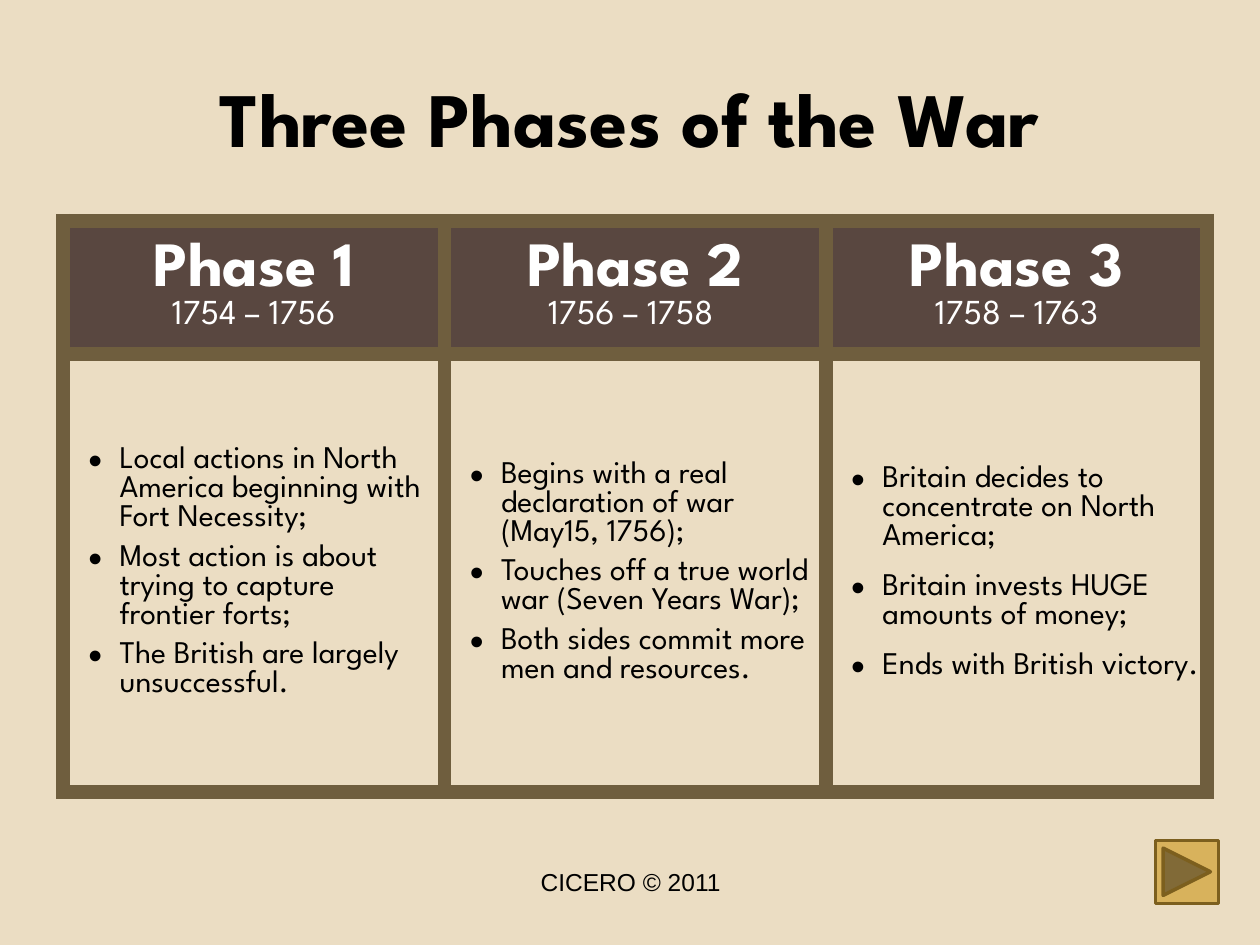
"""Build a slide with a table of the three phases of the war."""
from lxml import etree
from pptx import Presentation
from pptx.dml.color import RGBColor
from pptx.enum.shapes import MSO_SHAPE
from pptx.enum.text import MSO_ANCHOR, PP_ALIGN
from pptx.oxml.ns import qn
from pptx.util import Cm, Pt

CENTER, LEFT = PP_ALIGN.CENTER, PP_ALIGN.LEFT
MIDDLE, TOP = MSO_ANCHOR.MIDDLE, MSO_ANCHOR.TOP
NEXT = MSO_SHAPE.ACTION_BUTTON_FORWARD_OR_NEXT

TITLE = "Three Phases of the War"
FOOTER = "CICERO © 2011"
PHASES = [
    ("Phase 1", "1754 – 1756", 6, [
        "Local actions in North America beginning with Fort Necessity;",
        "Most action is about trying to capture frontier forts;",
        "The British are largely unsuccessful."]),
    ("Phase 2", "1756 – 1758 ", 6, [
        "Begins with a real declaration of war (May15, 1756);",
        "Touches off a true world war (Seven Years War);",
        "Both sides commit more men and resources."]),
    ("Phase 3", "1758 – 1763", 12, [
        "Britain decides to concentrate on North America;",
        "Britain invests HUGE amounts of money;",
        "Ends with British victory."]),
]
HUES = {"paper": "EBDDC3", "head": "594740", "grid": "6F5E3E", "ink": "000000",
        "white": "FFFFFF", "gold": "D8B25C", "edge": "7C5F1E"}
SPARTAN, ARIAL = "League Spartan", "Arial"
COL, ROWS = Cm(7.69), (Cm(2.62), Cm(8.82))
PAD = Cm(0.16)


def tint(name):
    return RGBColor.from_string(HUES[name])


def style(para, size, hue="ink", face=SPARTAN, bold=False, align=CENTER):
    para.alignment = align
    font = para.font
    font.name, font.size, font.bold = face, Pt(size), bold
    font.color.rgb = tint(hue)


def bullet(para):
    props = para._p.get_or_add_pPr()
    props.set("marL", str(Cm(0.98)))
    props.set("indent", str(-Cm(0.63)))
    for tag, key, value in (("a:buSzPct", "val", "125000"),
                            ("a:buFont", "typeface", ARIAL),
                            ("a:buChar", "char", "•")):
        etree.SubElement(props, qn(tag)).set(key, value)


def write(frame, lines):
    frame.text = "\n".join(lines)
    return frame.paragraphs


def label(slide, box, text, anchor, **look):
    frame = slide.shapes.add_textbox(*map(Cm, box)).text_frame
    frame.word_wrap = True
    frame.vertical_anchor = anchor
    style(write(frame, [text])[0], **look)


def dress(cell, hue):
    cell.fill.solid()
    cell.fill.fore_color.rgb = tint(hue)
    cell.vertical_anchor = MIDDLE
    cell.margin_left = cell.margin_right = PAD
    cell.margin_top = cell.margin_bottom = PAD
    props = cell._tc.get_or_add_tcPr()
    for spot, side in enumerate(("lnL", "lnR", "lnT", "lnB")):
        line = etree.Element(qn("a:" + side), w=str(Pt(9)))
        fill = etree.SubElement(line, qn("a:solidFill"))
        etree.SubElement(fill, qn("a:srgbClr"), val=HUES["grid"])
        props.insert(spot, line)


def grid(slide):
    count = len(PHASES)
    table = slide.shapes.add_table(
        len(ROWS), count, Cm(1.27), Cm(4.45), COL * count, sum(ROWS)).table
    for row, height in zip(table.rows, ROWS):
        row.height = height
    for col, (name, years, gap, facts) in enumerate(PHASES):
        table.columns[col].width = COL
        head, body = table.cell(0, col), table.cell(1, col)
        dress(head, "head")
        dress(body, "paper")
        top, low = write(head.text_frame, [name, years])
        style(top, 36, "white", bold=True)
        style(low, 20, "white")
        for para in write(body.text_frame, facts):
            para.space_after = Pt(gap)
            bullet(para)
            style(para, 18, align=LEFT)


def button(slide):
    shape = slide.shapes.add_shape(NEXT, Cm(23.29), Cm(16.94), Cm(1.27), Cm(1.27))
    shape.shadow.inherit = False
    shape.fill.solid()
    shape.fill.fore_color.rgb = tint("gold")
    shape.line.color.rgb = tint("edge")
    shape.line.width = Pt(2)


def main():
    deck = Presentation()
    deck.slide_width, deck.slide_height = Cm(25.4), Cm(19.05)
    slide = deck.slides.add_slide(deck.slide_layouts[6])
    slide.background.fill.solid()
    slide.background.fill.fore_color.rgb = tint("paper")
    label(slide, (1.27, 0.76, 22.86, 3.18), TITLE, MIDDLE, size=44, bold=True)
    label(slide, (8.69, 17.35, 8.05, 1.32), FOOTER, TOP, size=14, face=ARIAL)
    button(slide)
    grid(slide)
    deck.save("out.pptx")


if __name__ == "__main__":
    main()
